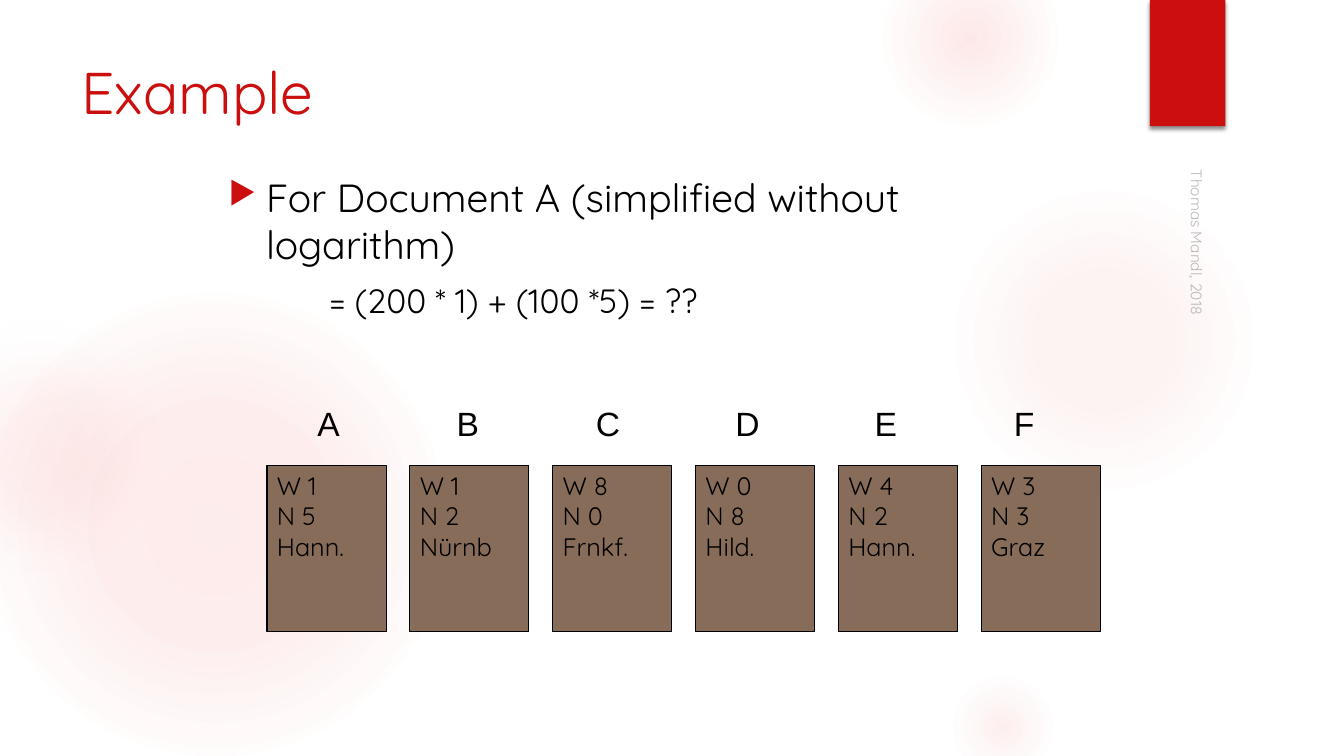
"""Build the slide with the worked example of document weights."""
import pptx
import pptx.util
import pptx.dml.color
import pptx.enum.shapes
import pptx.enum.text
import pptx.oxml

Cm, Pt = pptx.util.Cm, pptx.util.Pt
SHAPE = pptx.enum.shapes.MSO_SHAPE
ANCHOR = pptx.enum.text.MSO_ANCHOR
ALIGN = pptx.enum.text.PP_ALIGN
NS = 'xmlns:a="http://schemas.openxmlformats.org/drawingml/2006/main"'
RED, BLACK = "CB0F0F", "000000"


def hue(tint, code):
    """Give a fill or font colour its hex value."""
    tint.rgb = pptx.dml.color.RGBColor.from_string(code)


def write(shape, lines, size, code=BLACK, face="Quicksand", **frame):
    """Fill a shape with one paragraph per line."""
    text = shape.text_frame
    form = {"word_wrap": True, "vertical_anchor": ANCHOR.TOP, **frame}
    for name, value in form.items():
        setattr(text, name, value)
    text.text = "\n".join(lines)
    for para in text.paragraphs:
        para.alignment = ALIGN.LEFT
        for name, value in {"size": Pt(size), "name": face}.items():
            setattr(para.font, name, value)
        hue(para.font.color, code)
    return text.paragraphs


deck = pptx.Presentation()
deck.slide_width, deck.slide_height = Cm(33.87), Cm(19.05)
slide = deck.slides.add_slide(deck.slide_layouts[6])
shapes = slide.shapes

blobs = [
    (-0.42, 7.41, 11.64, [(0, "F35C5C", 11), (36, "F35C5C", 10), (75, "F35C5C", 0)]),
    (-2.33, 8.04, 6.56, [(0, "F35C5C", 8), (36, "F35C5C", 5), (71, "F3F3F3", 0)]),
    (23.9, 4.66, 7.83, [(0, "F35C5C", 7), (36, "F35C5C", 6), (69, "F35C5C", 0)]),
    (22.23, -1.27, 4.45, [(0, "F35C5C", 14), (36, "F35C5C", 7), (73, "F35C5C", 0)]),
    (23.9, 16.93, 2.75, [(0, "F35C5C", 10), (31, "F35C5C", 5), (66, "F35C5C", 0)]),
]
for left, top, size, stops in blobs:
    blob = shapes.add_shape(SHAPE.OVAL, Cm(left), Cm(top), Cm(size), Cm(size))
    blob.shadow.inherit = False
    blob.line.fill.background()
    blob.fill.background()
    marks = "".join(
        f'<a:gs pos="{pos * 1000}"><a:srgbClr val="{code}">'
        f'<a:alpha val="{alpha * 1000}"/></a:srgbClr></a:gs>'
        for pos, code, alpha in stops)
    glow = pptx.oxml.parse_xml(
        f'<a:gradFill {NS}><a:gsLst>{marks}</a:gsLst><a:path path="circle">'
        '<a:fillToRect l="50000" t="50000" r="50000" b="50000"/></a:path></a:gradFill>')
    props = blob._element.spPr
    props.replace(props.find(pptx.oxml.ns.qn("a:noFill")), glow)

flag = shapes.add_shape(SHAPE.RECTANGLE, Cm(28.98), Cm(0), Cm(1.9), Cm(3.18))
flag.shadow.inherit = False
flag.fill.solid()
hue(flag.fill.fore_color, RED)
flag.line.fill.background()
flag._element.spPr.find(pptx.oxml.ns.qn("a:effectLst")).append(pptx.oxml.parse_xml(
    f'<a:outerShdw {NS} blurRad="{Pt(3)}" dist="{Pt(2)}" dir="5400000">'
    f'<a:srgbClr val="{BLACK}"><a:alpha val="45000"/></a:srgbClr></a:outerShdw>'))

title = shapes.add_textbox(Cm(1.8), Cm(1.27), Cm(26.14), Cm(3.89))
write(title, ["Example"], 42, RED)

body = shapes.add_textbox(Cm(5.51), Cm(4.24), Cm(22.43), Cm(4.22))
point, sum_line = write(
    body, ["For Document A (simplified without logarithm)", "= (200 * 1) + (100 *5) = ??"],
    28, margin_right=Cm(0.6))
sum_line.font.size = Pt(24)
sum_line.level = 1
point.space_after = Pt(6)
sum_line.space_before = Pt(3)
for para, indent, hang in [(point, 0.95, -0.95), (sum_line, 2.54, 0)]:
    props = para._p.get_or_add_pPr()
    props.set("marL", str(Cm(indent)))
    props.set("indent", str(Cm(hang)))
props = point._p.get_or_add_pPr()
for part in [f'<a:buClr {NS}><a:srgbClr val="{RED}"/></a:buClr>',
             f'<a:buSzPct {NS} val="80000"/>', f'<a:buChar {NS} char="▶"/>']:
    props.insert_element_before(
        pptx.oxml.parse_xml(part), "a:tabLst", "a:defRPr", "a:extLst")

cards = [("A", 1, 5, "Hann."), ("B", 1, 2, "Nürnb"), ("C", 8, 0, "Frnkf."),
         ("D", 0, 8, "Hild."), ("E", 4, 2, "Hann."), ("F", 3, 3, "Graz")]
for col, (name, win, num, town) in enumerate(cards):
    card = shapes.add_shape(
        SHAPE.RECTANGLE, Cm(6.73 + 3.6 * col), Cm(11.73), Cm(3), Cm(4.19))
    card.shadow.inherit = False
    card.fill.solid()
    hue(card.fill.fore_color, "876C5A")
    hue(card.line.color, BLACK)
    card.line.width = Pt(0.75)
    write(card, [f"W {win}", f"N {num}", town], 18)
    label = shapes.add_textbox(Cm(7.75 + 3.51 * col), Cm(10.03), Cm(1.1), Cm(1.28))
    write(label, [name], 24, face="Arial", word_wrap=False)

credit = shapes.add_textbox(Cm(24.87), Cm(8.97), Cm(10.72), Cm(0.84))
credit.rotation = 90
line = write(credit, ["Thomas Mandl, 2018"], 11, "8C8C8C", vertical_anchor=ANCHOR.BOTTOM)[0]
tint = line.font._element.find(".//" + pptx.oxml.ns.qn("a:srgbClr"))
tint.append(pptx.oxml.parse_xml(f'<a:alpha {NS} val="60000"/>'))

deck.save("out.pptx")
